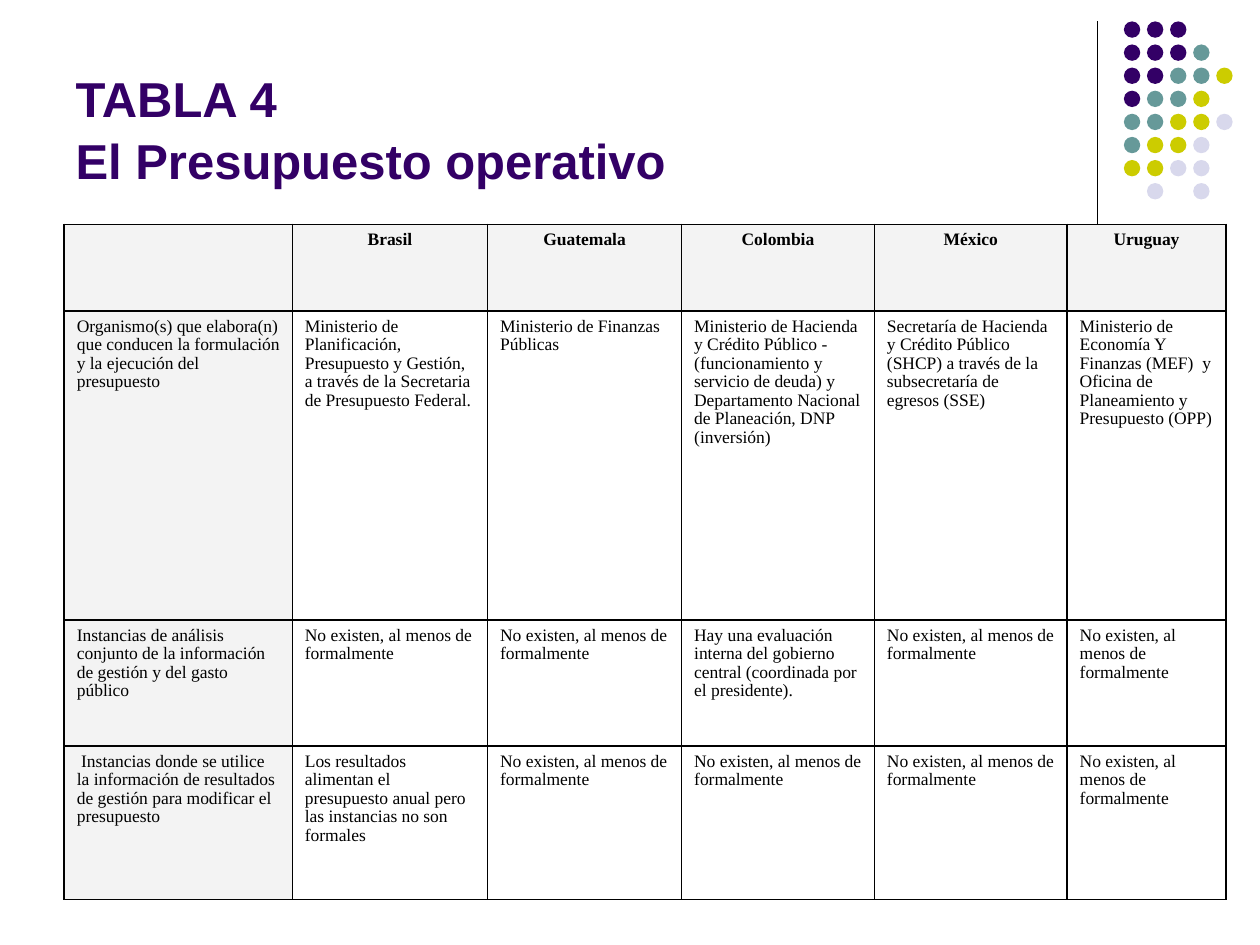
from pptx import Presentation
from pptx.dml.color import RGBColor
from pptx.enum import shapes, text
from pptx.oxml.ns import qn
from pptx.util import Inches, Pt
from lxml import etree

BLACK = RGBColor(0x00, 0x00, 0x00)
PURPLE = RGBColor(0x33, 0x00, 0x66)
TEAL = RGBColor(0x66, 0x99, 0x99)
LIME = RGBColor(0xCC, 0xCC, 0x00)
LAVENDER = RGBColor(0xD8, 0xD8, 0xEC)
GRAY = RGBColor(0xF3, 0xF3, 0xF3)

DOT_COLORS = {"P": PURPLE, "T": TEAL, "L": LIME, "V": LAVENDER}
DOT_ROWS = ["PPP", "PPPT", "PPTTL", "PTTL", "TTLLV", "TLLV", "LLVV", ".V.V"]
DOT_PITCH = 0.55 / 3

NONE = "No existen, al menos de formalmente"
COLUMN_WIDTHS = [1.81, 1.55, 1.54, 1.53, 1.53, 1.26]
ROW_HEIGHTS = [0.69, 2.45, 1, 1.22]
ROWS = [
    ["", "Brasil", "Guatemala", "Colombia", "México", "Uruguay"],
    ["Organismo(s) que elabora(n) que conducen la formulación y la ejecución del presupuesto",
     "Ministerio de Planificación, Presupuesto y Gestión, a través de la Secretaria de Presupuesto Federal.",
     "Ministerio de Finanzas Públicas",
     "Ministerio de Hacienda y Crédito Público - (funcionamiento y servicio de deuda) "
     "y Departamento Nacional de Planeación, DNP (inversión)",
     "Secretaría de Hacienda y Crédito Público (SHCP) a través de la subsecretaría de egresos (SSE)",
     "Ministerio de Economía Y Finanzas (MEF)  y Oficina de Planeamiento y Presupuesto (OPP)"],
    ["Instancias de análisis conjunto de la información de gestión y del gasto público",
     NONE, NONE,
     "Hay una evaluación interna del gobierno central (coordinada por el presidente).",
     NONE, NONE],
    [" Instancias donde se utilice la información de resultados de gestión para modificar el presupuesto",
     "Los resultados alimentan el presupuesto anual pero las instancias no son formales",
     NONE, NONE, NONE, NONE],
]


def format_font(font, color, **values):
    font.color.rgb = color
    for name, value in values.items():
        setattr(font, name, value)


def add_border(cell, side, width):
    """Draw one black cell edge; side is L, R, T or B."""
    edge = etree.SubElement(cell._tc.get_or_add_tcPr(), qn(f"a:ln{side}"), w=str(Pt(width)))
    fill = etree.SubElement(edge, qn("a:solidFill"))
    etree.SubElement(fill, qn("a:srgbClr"), val=str(BLACK))


deck = Presentation()
deck.slide_width, deck.slide_height = Inches(10), Inches(7.5)
page = deck.slides.add_slide(deck.slide_layouts[5])

# Title
title = page.shapes.title
title.left, title.top = Inches(0.5), Inches(0.13)
title.width, title.height = Inches(8.25), Inches(1.42)
title.text_frame.vertical_anchor = text.MSO_ANCHOR.BOTTOM
para = title.text_frame.paragraphs[0]
para.alignment = text.PP_ALIGN.LEFT
para.line_spacing = 1.05
for index, line in enumerate(["TABLA 4", "El Presupuesto operativo"]):
    if index:
        para.add_line_break()
    span = para.add_run()
    span.text = line
    format_font(span.font, PURPLE, name="Arial", size=Pt(28), bold=True)

# Rule and dot pattern
rule = page.shapes.add_connector(
    shapes.MSO_CONNECTOR.STRAIGHT, Inches(8.71), Inches(0.17), Inches(8.71), Inches(1.83))
rule.line.color.rgb = BLACK
rule.line.width = Pt(0.75)
etree.SubElement(rule._element.spPr, qn("a:effectLst"))

for row, codes in enumerate(DOT_ROWS):
    for column, code in enumerate(codes):
        if code == ".":
            continue
        dot = page.shapes.add_shape(
            shapes.MSO_SHAPE.OVAL,
            Inches(8.92 + column * DOT_PITCH), Inches(0.17 + row * DOT_PITCH),
            Inches(0.13), Inches(0.13))
        dot.shadow.inherit = False
        dot.fill.solid()
        dot.fill.fore_color.rgb = DOT_COLORS[code]
        dot.line.fill.background()

# Table
table = page.shapes.add_table(
    len(ROWS), len(COLUMN_WIDTHS), Inches(0.51), Inches(1.78),
    Inches(sum(COLUMN_WIDTHS)), Inches(sum(ROW_HEIGHTS))).table
table.first_row = table.horz_banding = False
for column, width in zip(table.columns, COLUMN_WIDTHS):
    column.width = Inches(width)
for row, height in zip(table.rows, ROW_HEIGHTS):
    row.height = Inches(height)

for r, entries in enumerate(ROWS):
    for c, entry in enumerate(entries):
        cell = table.cell(r, c)
        for side in "LRTB":
            add_border(cell, side, 0.75 if side == "B" and r == len(ROWS) - 1 else 1)
        if r == 0 or c == 0:
            cell.fill.solid()
            cell.fill.fore_color.rgb = GRAY
        else:
            cell.fill.background()
        if entry:
            para = cell.text_frame.paragraphs[0]
            para.alignment = text.PP_ALIGN.CENTER if r == 0 else text.PP_ALIGN.LEFT
            para.line_spacing = 0.96
            span = para.add_run()
            span.text = entry
            format_font(span.font, BLACK, name="Times New Roman", size=Pt(10), bold=r == 0)

deck.save("out.pptx")
